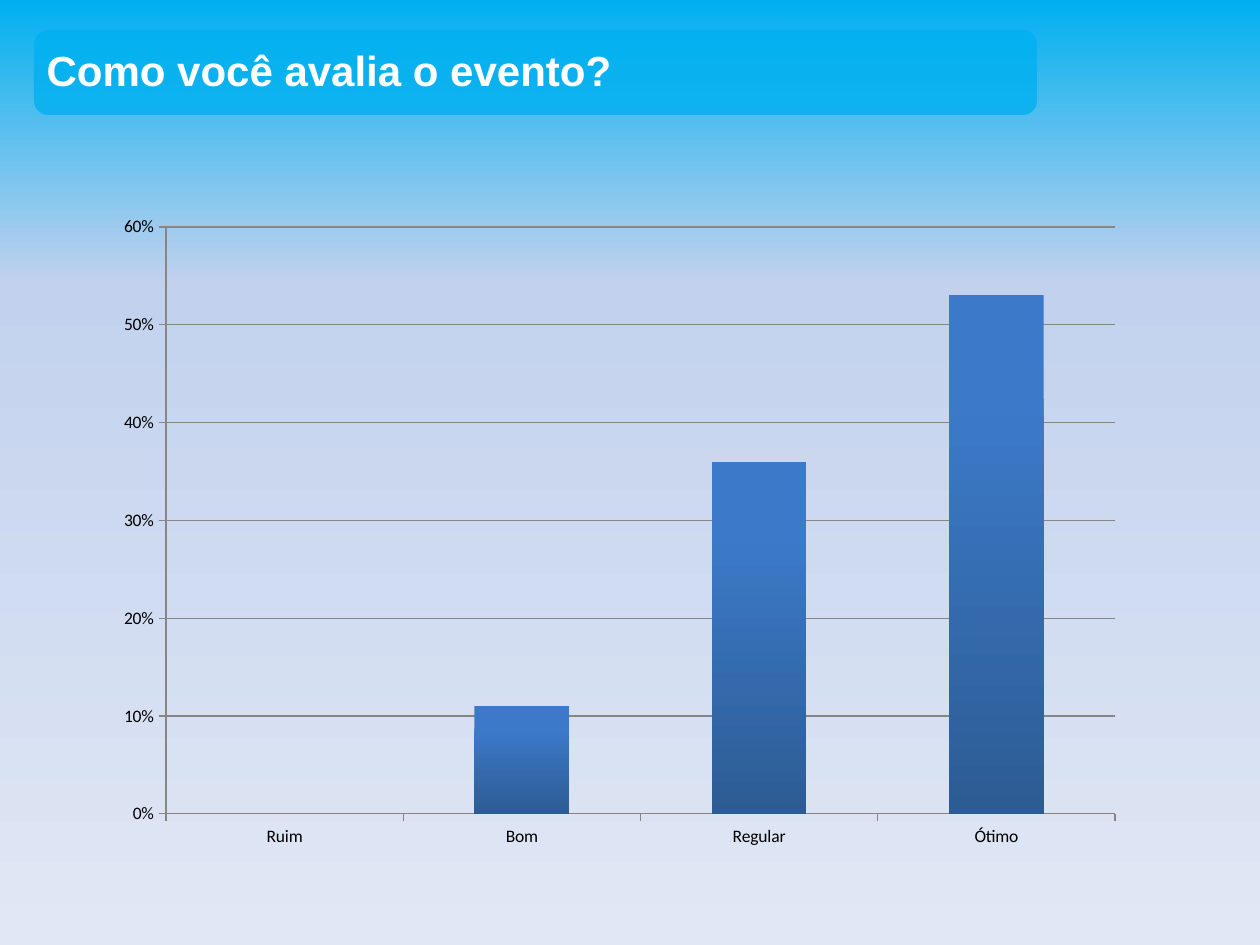
from lxml.etree import SubElement
from pptx import Presentation
from pptx.chart.data import CategoryChartData
from pptx.dml.color import RGBColor
from pptx.enum.chart import XL_CHART_TYPE, XL_TICK_MARK
from pptx.enum.shapes import MSO_SHAPE
from pptx.enum.text import MSO_ANCHOR, PP_ALIGN
from pptx.oxml.ns import qn
from pptx.util import Pt

# Content
QUESTION = "Como você avalia o evento?"
RATINGS = {"Ruim": 0, "Bom": 0.11, "Regular": 0.36, "Ótimo": 0.53}

# Gradient stops from top to bottom: (percent, colour)
SKY = [(0, "00B0F0"), (30, "C2D1ED"), (100, "E1E8F5")]
BAR_BLUE = [(0, "3C7AC9"), (20, "3C7AC9"), (100, "2D5C94")]

# Places in px: left, top, width, height
BANNER = (34, 30, 1003, 85)
TITLE = (34, 38, 1003, 63)
CHART = (105, 204, 1032, 655)
PLOT = (166, 227, 949, 587)
EMU_PER_PX = 914400 // 126


def px(*lengths):
    return [round(length * EMU_PER_PX) for length in lengths]


def rgb(hex_colour):
    return RGBColor.from_string(hex_colour)


def format_font(font, size, colour, name, bold=False):
    font.size, font.name, font.bold = Pt(size), name, bold
    font.color.rgb = rgb(colour)


def write(shape, text, size=24, colour="FFFFFF", name="Arial", bold=True):
    frame = shape.text_frame
    frame.text = text
    frame.word_wrap = True
    frame.vertical_anchor = MSO_ANCHOR.MIDDLE
    frame.paragraphs[0].alignment = PP_ALIGN.LEFT
    format_font(frame.paragraphs[0].runs[0].font, size, colour, name, bold)


def fill_gradient(fill, owner, stops):
    """Fill from top to bottom; owner is the XML element that holds the fill."""
    fill.gradient()
    fill.gradient_angle = 270
    stop_list = owner.find(".//" + qn("a:gsLst"))
    for old_stop in list(stop_list):
        stop_list.remove(old_stop)
    for percent, colour in stops:
        stop = SubElement(stop_list, qn("a:gs"), pos=str(percent * 1000))
        SubElement(stop, qn("a:srgbClr"), val=colour)


def place_plot(chart):
    plot_area = chart.element.find(".//" + qn("c:plotArea"))
    layout = plot_area.find(qn("c:layout"))
    if layout is None:
        layout = SubElement(plot_area, qn("c:layout"))
        plot_area.insert(0, layout)
    manual = SubElement(layout, qn("c:manualLayout"))
    left, top, width, height = CHART
    settings = {
        "layoutTarget": "inner", "xMode": "edge", "yMode": "edge",
        "x": (PLOT[0] - left) / width, "y": (PLOT[1] - top) / height,
        "w": PLOT[2] / width, "h": PLOT[3] / height,
    }
    for tag, value in settings.items():
        SubElement(manual, qn("c:" + tag), val=str(value))


def add_ratings_chart(slide):
    data = CategoryChartData(number_format="0%")
    data.categories = list(RATINGS)
    data.add_series("Series 1", list(RATINGS.values()))
    chart = slide.shapes.add_chart(
        XL_CHART_TYPE.COLUMN_STACKED, *px(*CHART), data).chart
    chart.has_legend = chart.has_title = False
    format_font(chart.font, 10, "000000", "Calibri")
    place_plot(chart)

    # Bars
    bars = chart.plots[0]
    bars.gap_width, bars.overlap, bars.vary_by_categories = 150, 100, False
    fill_gradient(bars.series[0].format.fill,
                  chart.element.find(".//" + qn("c:ser")), BAR_BLUE)

    # Axes and grid
    shares = chart.value_axis
    shares.minimum_scale, shares.maximum_scale, shares.major_unit = 0, 0.6, 0.1
    shares.has_major_gridlines = True
    shares.tick_labels.number_format = "0%"
    shares.tick_labels.number_format_is_linked = False
    for part in (shares, chart.category_axis, shares.major_gridlines):
        part.format.line.color.rgb = rgb("868686")
        part.format.line.width = Pt(0.75)
    for axis in (shares, chart.category_axis):
        axis.major_tick_mark = XL_TICK_MARK.OUTSIDE
        axis.minor_tick_mark = XL_TICK_MARK.NONE


def main():
    presentation = Presentation()
    presentation.slide_width, presentation.slide_height = px(1260, 945)
    slide = presentation.slides.add_slide(presentation.slide_layouts[5])
    fill_gradient(slide.background.fill, slide.element, SKY)

    # Title over its translucent banner
    title = slide.shapes.title
    title.left, title.top, title.width, title.height = px(*TITLE)
    write(title, QUESTION)
    banner = slide.shapes.add_shape(MSO_SHAPE.ROUNDED_RECTANGLE, *px(*BANNER))
    banner.shadow.inherit = False
    banner.fill.solid()
    banner.fill.fore_color.rgb = rgb("00B0F0")
    banner.line.fill.background()
    SubElement(banner.element.find(".//" + qn("a:srgbClr")),
               qn("a:alpha"), val="80000")
    title.element.addprevious(banner.element)

    add_ratings_chart(slide)
    presentation.save("out.pptx")


if __name__ == "__main__":
    main()
